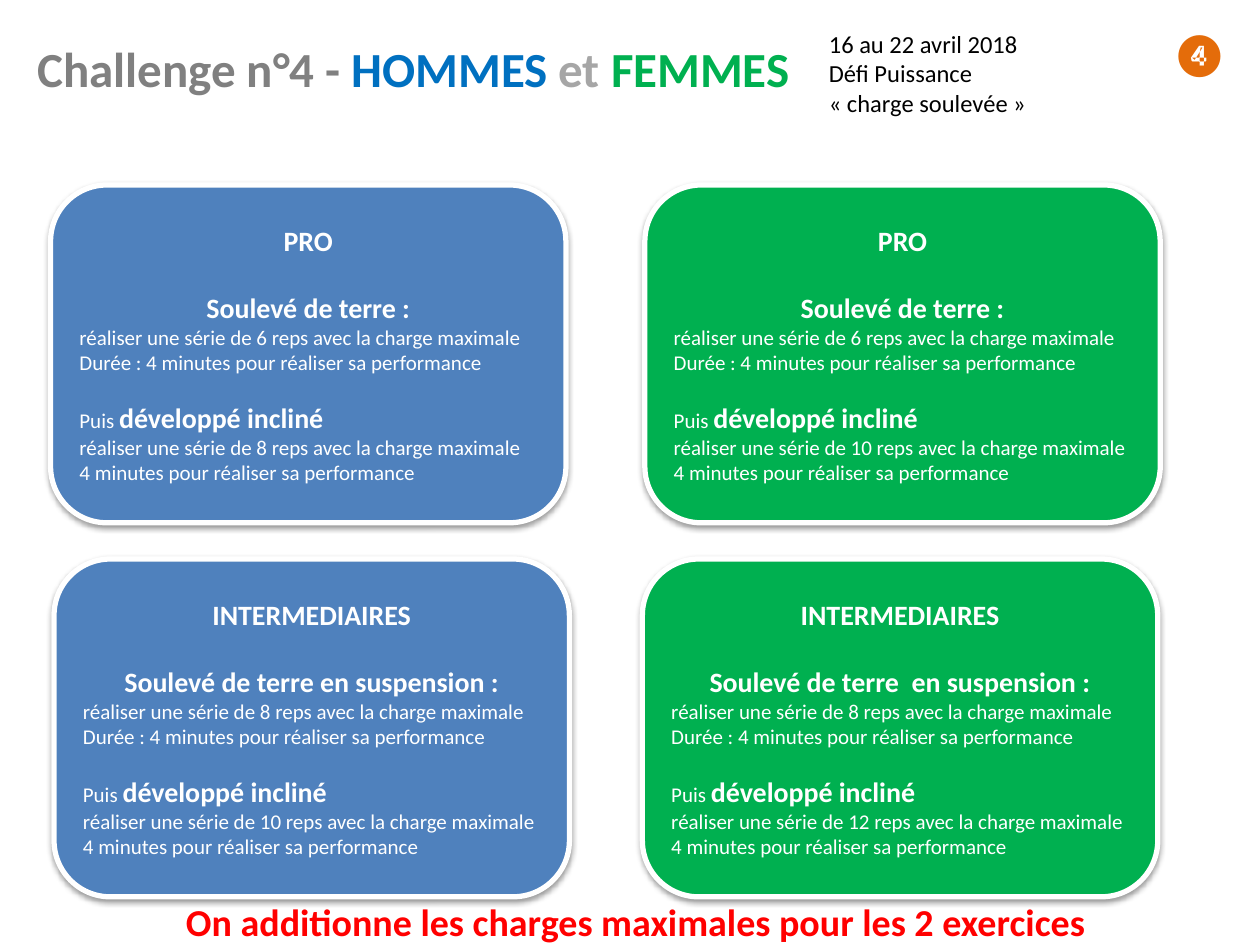
import pptx
import pptx.util
import pptx.dml.color
import pptx.enum.shapes
import pptx.enum.text
import pptx.oxml
import pptx.oxml.ns

Cm, Pt = pptx.util.Cm, pptx.util.Pt
ALIGN = pptx.enum.text.PP_ALIGN
ANCHOR = pptx.enum.text.MSO_ANCHOR

# Content
COLORS = {
    "grey": "808080", "light grey": "A6A6A6", "blue": "0070C0",
    "green": "00B050", "card blue": "4F81BD", "orange": "E46C0A",
    "red": "FF0000", "black": "000000", "white": "FFFFFF",
}
TITLE = [("Challenge n°4 - ", "grey"), ("HOMMES ", "blue"),
         ("et ", "light grey"), ("FEMMES", "green")]
DETAILS = ["16 au 22 avril 2018", "Défi Puissance", "« charge soulevée »"]
NUMBER = "❹"
FOOTER = "On additionne les charges maximales pour les 2 exercices"
# level, first exercise, its reps, reps of the second exercise, left, row, fill
CARDS = [
    ("PRO", "Soulevé de terre :", 6, 8, 1.02, 0, "card blue"),
    ("PRO", "Soulevé de terre :", 6, 10, 13, 0, "green"),
    ("INTERMEDIAIRES", "Soulevé de terre en suspension :", 8, 10, 1.09, 1, "card blue"),
    ("INTERMEDIAIRES", "Soulevé de terre  en suspension :", 8, 12, 12.95, 1, "green"),
]

# Layout, in centimetres
CARD_WIDTH, CARD_HEIGHT = 10.39, 6.81
CARD_TOP, ROW_PITCH = 3.73, 7.54

# Text formats
HEADING = {"size": Pt(16), "bold": True}
BODY = {"size": Pt(12), "bold": False}
CENTERED = {"alignment": ALIGN.CENTER}
LEFT = {"alignment": ALIGN.LEFT}
HEADING_GAP = {"space_before": Pt(19.5)}
BODY_GAP = {"space_before": Pt(14.65)}


def apply(target, values):
    for name, value in values.items():
        setattr(target, name, value)


def color(name):
    return pptx.dml.color.RGBColor.from_string(COLORS[name])


def write(shape, paragraphs, frame_format):
    """Each paragraph is (format, spans); each span is (text, font format, colour)."""
    frame = shape.text_frame
    apply(frame, {"word_wrap": True, **frame_format})
    for index, (para_format, spans) in enumerate(paragraphs):
        para = frame.add_paragraph() if index else frame.paragraphs[0]
        apply(para, para_format)
        for text, font_format, color_name in spans:
            span = para.add_run()
            span.text = text
            apply(span.font, {"name": "Calibri", **font_format})
            span.font.color.rgb = color(color_name)


def add_text(page, place, paragraphs, **frame_format):
    box = page.shapes.add_textbox(*map(Cm, place))
    write(box, paragraphs, frame_format)


def add_shadow(shape):
    shape.shadow.inherit = False
    effects = shape._element.spPr.find(pptx.oxml.ns.qn("a:effectLst"))
    effects.append(pptx.oxml.parse_xml(
        f'<a:outerShdw {pptx.oxml.ns.nsdecls("a")} blurRad="{Pt(3.1)}" '
        f'dist="{Pt(1.6)}" dir="5400000" rotWithShape="0">'
        f'<a:srgbClr val="{COLORS["black"]}"><a:alpha val="38000"/></a:srgbClr>'
        '</a:outerShdw>'))


def add_card(page, level, exercise, first_reps, second_reps, left, row, fill):
    card = page.shapes.add_shape(
        pptx.enum.shapes.MSO_SHAPE.ROUNDED_RECTANGLE, Cm(left),
        Cm(CARD_TOP + row * ROW_PITCH), Cm(CARD_WIDTH), Cm(CARD_HEIGHT))
    card.fill.solid()
    card.fill.fore_color.rgb = color(fill)
    card.line.color.rgb = color("white")
    card.line.width = Pt(3)
    add_shadow(card)

    def series(reps):
        return f"réaliser une série de {reps} reps avec la charge maximale"

    lines = [
        (CENTERED, [(level, HEADING)]),
        ({**CENTERED, **HEADING_GAP}, [(exercise, HEADING)]),
        (LEFT, [(series(first_reps), BODY)]),
        (LEFT, [("Durée : 4 minutes pour réaliser sa performance", BODY)]),
        ({**LEFT, **BODY_GAP}, [("Puis ", BODY), ("développé incliné", HEADING)]),
        (LEFT, [(series(second_reps), BODY)]),
        (LEFT, [("4 minutes pour réaliser sa performance", BODY)]),
    ]
    write(card, [(para_format, [(*span, "white") for span in spans])
                 for para_format, spans in lines],
          {"vertical_anchor": ANCHOR.MIDDLE})


def main():
    deck = pptx.Presentation()
    deck.slide_width, deck.slide_height = Cm(25.4), Cm(19.05)
    page = deck.slides.add_slide(deck.slide_layouts[6])

    # Header
    title_font = {"size": Pt(28), "bold": True}
    add_text(page, (0.5, 0.46, 24, 1.8),
             [(LEFT, [(text, title_font, name) for text, name in TITLE])],
             vertical_anchor=ANCHOR.MIDDLE)
    add_text(page, (23.37, 0.43, 1.27, 1.27),
             [(LEFT, [(NUMBER, {"size": Pt(24), "bold": True}, "orange")])],
             word_wrap=False)
    add_text(page, (16.46, 0.46, 6.45, 2.06),
             [(LEFT, [(text, {"size": Pt(14)}, "black")]) for text in DETAILS])

    # Cards: men on the left, women on the right
    for card in CARDS:
        add_card(page, *card)

    # Footer
    add_text(page, (3.5, 17.68, 19, 1.8),
             [(LEFT, [(FOOTER, {"size": Pt(21.7), "bold": True}, "red")])],
             vertical_anchor=ANCHOR.MIDDLE)

    deck.save("out.pptx")


if __name__ == "__main__":
    main()
